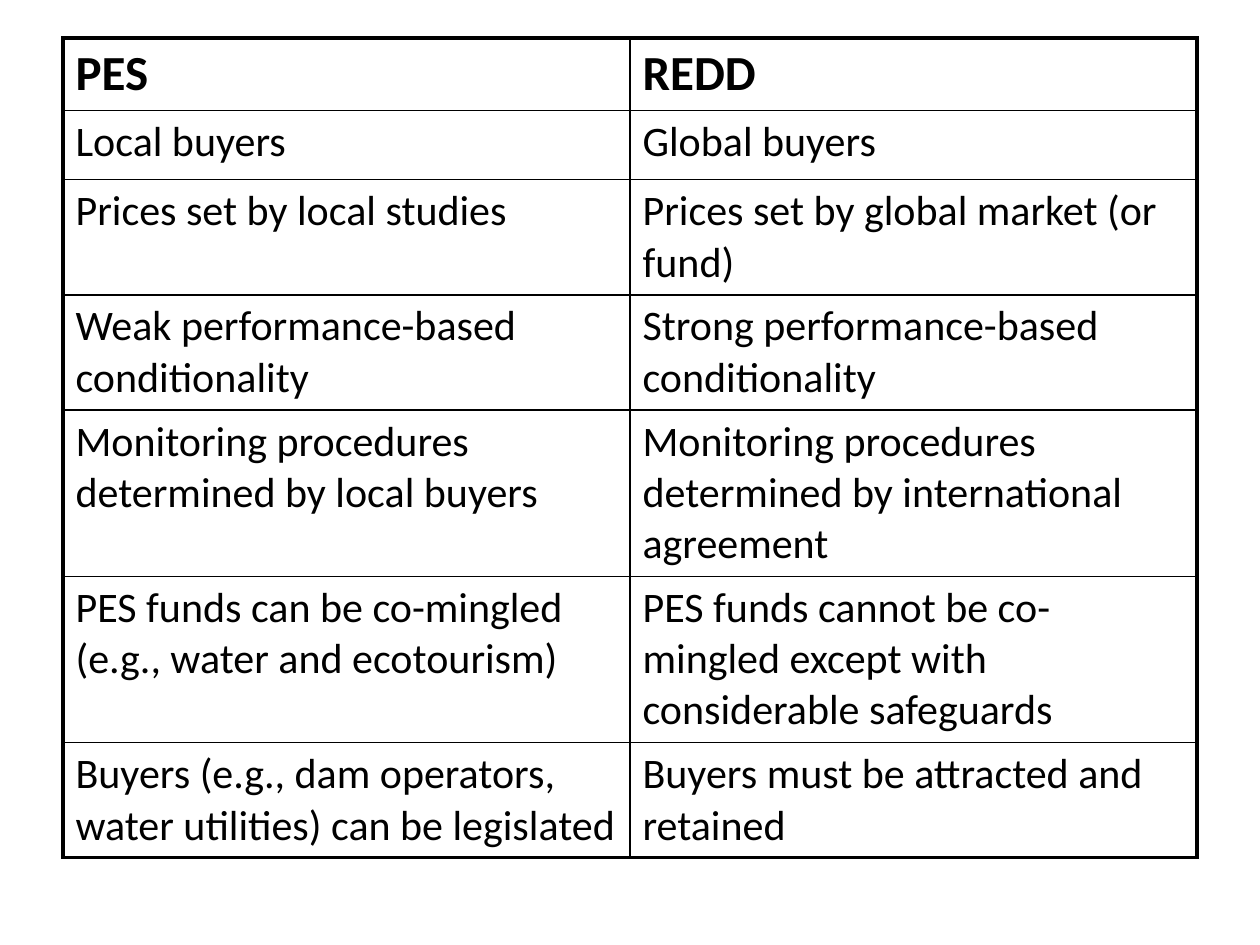
from dataclasses import dataclass

import lxml.etree
import pptx
import pptx.dml.color
import pptx.oxml.ns
import pptx.util

WIDE, HIGH = pptx.util.Inches(10), pptx.util.Inches(7.5)
INK = "000000"
THIN, THICK = 1, 2.25


@dataclass
class Row:
    pes: str
    redd: str
    high: float  # inches
    size: int = 24
    bold: bool = False


ROWS = [
    Row("PES", "REDD", 0.57, 28, True),
    Row("Local buyers", "Global buyers", 0.55),
    Row("Prices set by local studies",
        "Prices set by global market (or fund)", 0.91),
    Row("Weak performance-based conditionality",
        "Strong performance-based conditionality", 0.91),
    Row("Monitoring procedures determined by local buyers",
        "Monitoring procedures determined by international agreement", 1.32),
    Row("PES funds can be co-mingled (e.g., water and ecotourism)",
        "PES funds cannot be co-mingled except with considerable safeguards",
        1.32),
    Row("Buyers (e.g., dam operators, water utilities) can be legislated",
        "Buyers must be attracted and retained", 0.91),
]


def color(text: str) -> pptx.dml.color.RGBColor:
    return pptx.dml.color.RGBColor.from_string(text)


def border(cell, side: str, width: float) -> None:
    name = pptx.oxml.ns.qn
    line = lxml.etree.SubElement(cell._tc.get_or_add_tcPr(), name(f"a:ln{side}"),
                                 w=str(pptx.util.Pt(width)))
    fill = lxml.etree.SubElement(line, name("a:solidFill"))
    lxml.etree.SubElement(fill, name("a:srgbClr"), val=INK)


def write(cell, text: str, row: Row) -> None:
    cell.text = text
    font = cell.text_frame.paragraphs[0].font
    font.name = "Calibri"
    font.size = pptx.util.Pt(row.size)
    font.bold = row.bold
    font.color.rgb = color(INK)


def frame(cell, edges: dict[str, bool]) -> None:
    """Draw thick lines on the table's outer edges and thin ones inside."""
    for side, outer in edges.items():
        border(cell, side, THICK if outer else THIN)
    cell.fill.background()


def main() -> None:
    deck = pptx.Presentation()
    deck.slide_width, deck.slide_height = WIDE, HIGH
    slide = deck.slides.add_slide(deck.slide_layouts[6])
    total = pptx.util.Inches(sum(row.high for row in ROWS))
    table = slide.shapes.add_table(len(ROWS), 2, int(WIDE * 0.05),
                                   int(HIGH * 0.04), int(WIDE * 0.9), total).table
    table.first_row = table.horz_banding = False
    last = len(ROWS) - 1
    for r, row in enumerate(ROWS):
        table.rows[r].height = pptx.util.Inches(row.high)
        for c, text in enumerate((row.pes, row.redd)):
            cell = table.cell(r, c)
            write(cell, text, row)
            frame(cell, {"L": c == 0, "R": c == 1, "T": r == 0, "B": r == last})
    deck.save("out.pptx")


if __name__ == "__main__":
    main()
